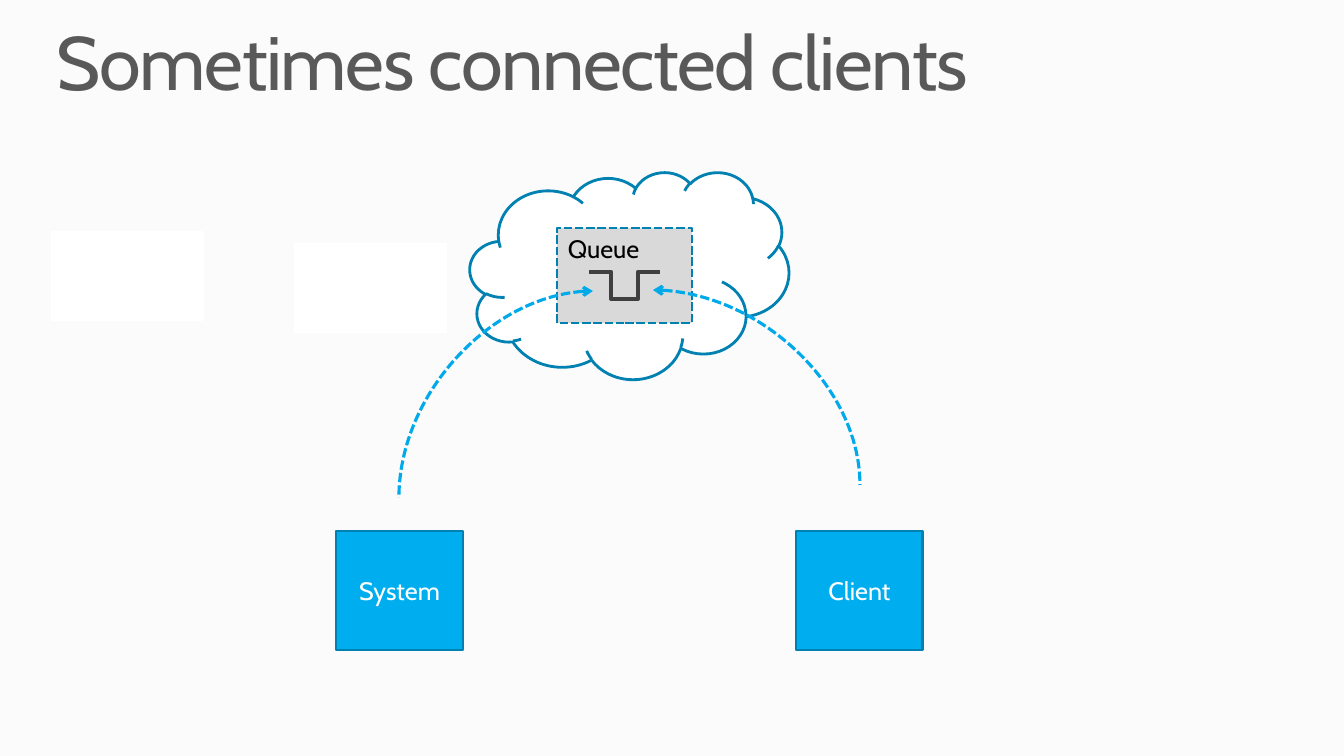
from lxml.etree import SubElement
from pptx import Presentation
from pptx.dml.color import RGBColor
from pptx.enum.dml import MSO_LINE
from pptx.enum.shapes import MSO_CONNECTOR, MSO_SHAPE
from pptx.enum.text import MSO_ANCHOR, MSO_AUTO_SIZE, PP_ALIGN
from pptx.oxml.ns import qn
from pptx.util import Pt

PX = 12192000 / 1344  # EMU per px
BACKGROUND = RGBColor(0xFB, 0xFB, 0xFB)
WHITE = RGBColor(0xFF, 0xFF, 0xFF)
BLACK = RGBColor(0x00, 0x00, 0x00)
TITLE_GREY = RGBColor(0x59, 0x59, 0x59)
BOX_GREY = RGBColor(0xD9, 0xD9, 0xD9)
SYMBOL_GREY = RGBColor(0x3F, 0x3F, 0x3F)
BLUE = RGBColor(0x00, 0xAE, 0xEF)
DARK_BLUE = RGBColor(0x00, 0x81, 0xB1)
ARROW_BLUE = RGBColor(0x00, 0xAA, 0xEA)


def px(*lengths):
    return [round(length * PX) for length in lengths]


def add_run(paragraph, text, size, color):
    run = paragraph.add_run()
    run.text = text
    run.font.name = "Cabin"
    run.font.size = Pt(size)
    run.font.color.rgb = color
    return run


presentation = Presentation()
presentation.slide_width, presentation.slide_height = px(1344, 756)
slide = presentation.slides.add_slide(presentation.slide_layouts[6])
slide.background.fill.solid()
slide.background.fill.fore_color.rgb = BACKGROUND

# Title
title = slide.shapes.add_textbox(*px(57, 25, 1229, 83))
frame = title.text_frame
frame.word_wrap = True
frame.margin_left = frame.margin_right = frame.margin_top = frame.margin_bottom = 0
frame.paragraphs[0].line_spacing = 0.9
title_run = add_run(frame.paragraphs[0], "Sometimes connected clients", 54, TITLE_GREY)
title_run.font._element.set("spc", "-100")

# Boxes and cloud, from back to front
for kind, bounds, fill, outline, label in (
    (MSO_SHAPE.RECTANGLE, (336, 531, 127, 119), BLUE, DARK_BLUE, "System"),
    (MSO_SHAPE.RECTANGLE, (796, 531, 127, 119), BLUE, DARK_BLUE, "Client"),
    (MSO_SHAPE.RECTANGLE, (52, 232, 151, 88), WHITE, WHITE, ""),
    (MSO_SHAPE.CLOUD_CALLOUT, (470, 172, 319, 207), WHITE, DARK_BLUE, ""),
    (MSO_SHAPE.RECTANGLE, (295, 244, 151, 88), WHITE, WHITE, ""),
    (MSO_SHAPE.RECTANGLE, (557, 228, 135, 95), BOX_GREY, DARK_BLUE, ""),
):
    shape = slide.shapes.add_shape(kind, *px(*bounds))
    shape.shadow.inherit = False
    shape.fill.solid()
    shape.fill.fore_color.rgb = fill
    shape.line.color.rgb = outline
    shape.line.width = Pt(2)
    if kind == MSO_SHAPE.CLOUD_CALLOUT:
        shape.adjustments[0] = -1.0
        shape.adjustments[1] = 0.13
    if fill == BOX_GREY:
        shape.line.dash_style = MSO_LINE.SQUARE_DOT
    if label:
        shape.text_frame.vertical_anchor = MSO_ANCHOR.MIDDLE
        paragraph = shape.text_frame.paragraphs[0]
        paragraph.alignment = PP_ALIGN.CENTER
        add_run(paragraph, label, 18, WHITE)

queue_label = slide.shapes.add_textbox(*px(558, 228, 97, 41))
queue_label.text_frame.word_wrap = False
queue_label.text_frame.auto_size = MSO_AUTO_SIZE.SHAPE_TO_FIT_TEXT
add_run(queue_label.text_frame.paragraphs[0], "Queue", 18, BLACK)

# Curved arrows at the queue, then the two halves of the queue symbol
queue_symbol = slide.shapes.add_group_shape()
for parent, kind, ends, color, width in (
    (slide, MSO_CONNECTOR.CURVE, (593, 291, 399, 498), ARROW_BLUE, 2.25),
    (slide, MSO_CONNECTOR.CURVE, (653, 290, 860, 485), ARROW_BLUE, 2.25),
    (queue_symbol, MSO_CONNECTOR.ELBOW, (616, 299, 660, 272), SYMBOL_GREY, 3),
    (queue_symbol, MSO_CONNECTOR.ELBOW, (633, 299, 589, 272), SYMBOL_GREY, 3),
):
    connector = parent.shapes.add_connector(kind, *px(*ends))
    connector.line.color.rgb = color
    connector.line.width = Pt(width)
    properties = connector._element.spPr
    if kind == MSO_CONNECTOR.CURVE:
        connector.line.dash_style = MSO_LINE.SQUARE_DOT
        properties.find(qn("a:prstGeom")).set("prst", "curvedConnector2")
        SubElement(properties.find(qn("a:ln")), qn("a:headEnd"), type="arrow")
    SubElement(properties, qn("a:effectLst"))

presentation.save("out.pptx")
